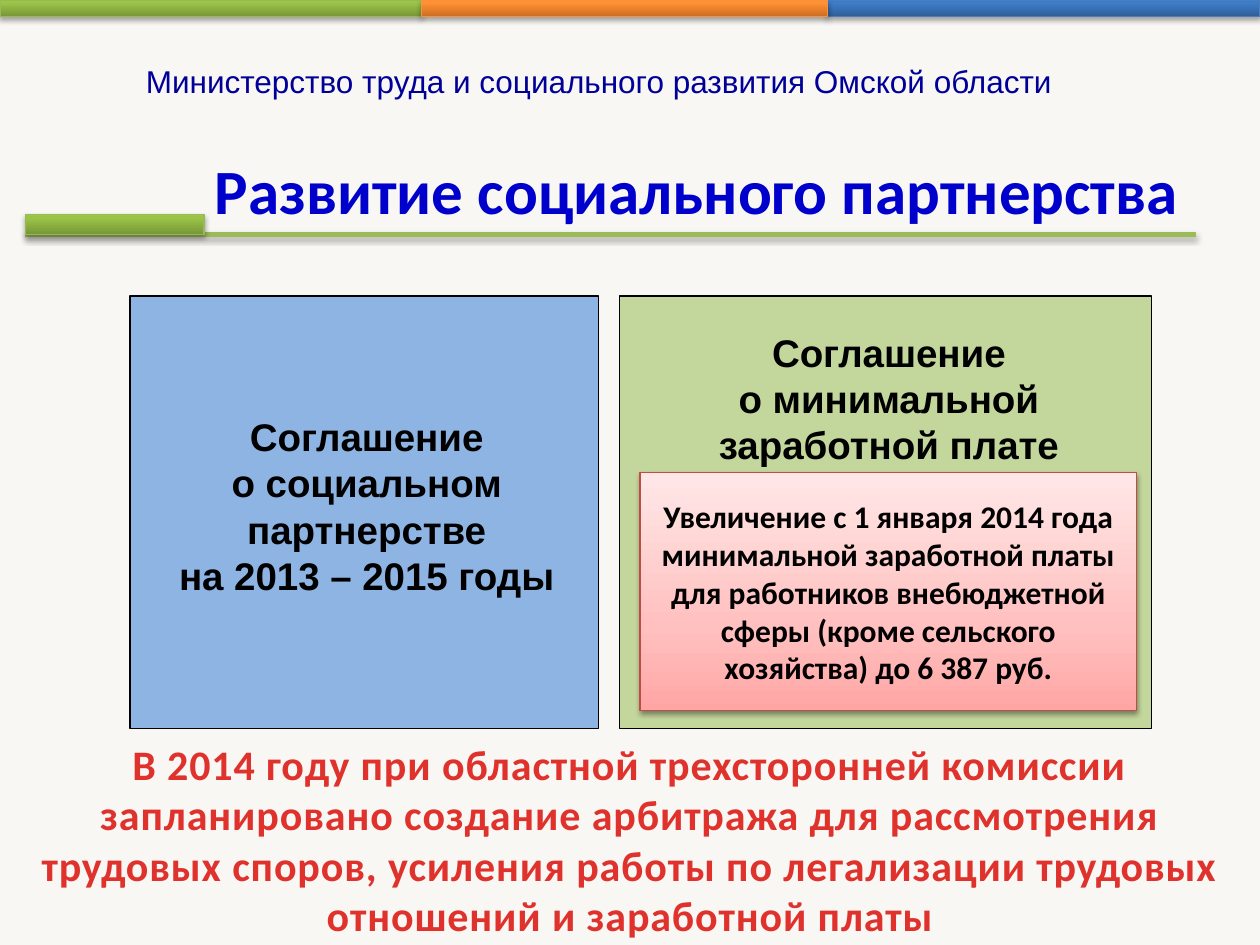
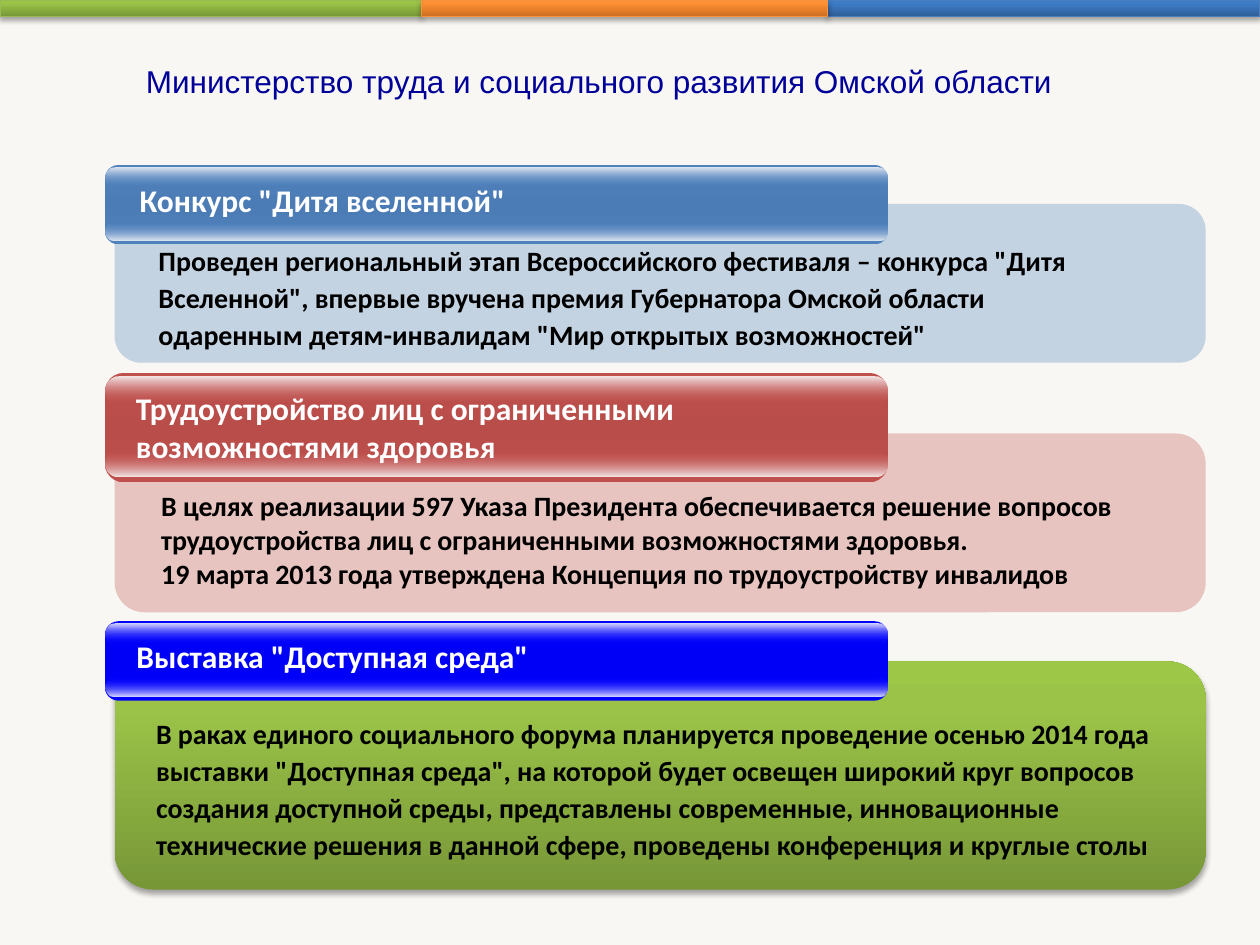
from dataclasses import dataclass

from lxml.etree import SubElement
from pptx import Presentation
from pptx.dml.color import RGBColor
from pptx.enum.shapes import MSO_CONNECTOR, MSO_SHAPE
from pptx.enum.text import MSO_ANCHOR, MSO_AUTO_SIZE, PP_ALIGN
from pptx.oxml.ns import qn
from pptx.util import Pt

LEFT, CENTER = PP_ALIGN.LEFT, PP_ALIGN.CENTER


@dataclass(frozen=True)
class Theme:
    background: str = "F8F7F3"
    ministry: str = "000099"
    title: str = "0000CC"
    title_outline: str = "0F243E"
    rule: str = "9BBB59"
    green_edge: str = "98B955"
    text: str = "000000"
    white: str = "FFFFFF"
    # Gradients: (position, colour, optional opacity)
    green: tuple = ((0, "779737"), (80, "9BC348"), (100, "9DC746"))
    orange: tuple = ((0, "CC6E20"), (80, "FF9034"), (100, "FF9136"))
    blue: tuple = ((0, "2F5F99"), (80, "3D7CC7"), (100, "3A7CCB"))
    pink: tuple = ((0, "FFA6A5"), (35, "FFC0BF"), (100, "FFE7E7"))
    red_text: tuple = ((25, "E0322D"), (100, "A2201C"))
    sans: str = "Arial"
    body: str = "Calibri"
    title_size: int = 36
    note_size: int = 24
    card_size: int = 22
    head_size: int = 18
    body_size: int = 16


T = Theme()

# Content
MINISTRY = "Министерство труда и социального развития Омской области"
TITLE = "Развитие социального партнерства"
COMMISSION = (
    "В 2014 году при областной трехсторонней комиссии запланировано создание "
    "арбитража для рассмотрения трудовых споров, усиления работы по легализации "
    "трудовых отношений и заработной платы")
WAGE_RISE = (
    "Увеличение с 1 января 2014 года минимальной заработной платы для работников "
    "внебюджетной сферы (кроме сельского хозяйства) до 6 387 руб.")

AGREEMENTS = [
    dict(card=(74.2, 169.2, 267.8, 247), color="8EB4E3",
         text_box=(70.6, 232.6, 277.9, 134.6),
         lines=["Соглашение", "о социальном партнерстве", "на 2013 – 2015 годы"]),
    dict(card=(354.2, 169.2, 303.8, 247), color="C3D69B",
         text_box=(364.3, 184.3, 287.3, 104),
         lines=["Соглашение", "о минимальной заработной плате"]),
]

# tab and panel hold (top, height)
SECTIONS = [
    dict(head='Конкурс "Дитя вселенной"', head_box=(59.8, 100.1, 249.1, 28.8),
         align=CENTER, tab=(94.3, 45.4), panel=(116.6, 90.7),
         tab_color="4F81BD", tab_middle="4C7CB6", gloss="E8ECF3",
         panel_fill=("4F81BD", 30), shadow=None, spacing=1.1,
         body_box=(83.5, 133.9, 542.9, 71.3),
         body=['Проведен региональный этап Всероссийского фестиваля – конкурса '
               '"Дитя Вселенной", впервые вручена премия Губернатора Омской области '
               'одаренным детям-инвалидам "Мир открытых возможностей"']),
    dict(head="Трудоустройство лиц с ограниченными возможностями здоровья",
         head_box=(70.6, 218.9, 339.8, 51.1),
         align=LEFT, tab=(213.1, 62.6), panel=(247.7, 102.2),
         tab_color="C0504D", tab_middle="B94D4A", gloss="F5ECEC",
         panel_fill=("C0504D", 30), shadow=None, spacing=1.0,
         body_box=(85, 275.8, 598.3, 65.5),
         body=["В целях реализации 597 Указа Президента обеспечивается решение вопросов "
               "трудоустройства лиц с ограниченными возможностями здоровья.",
               "19 марта 2013 года утверждена Концепция по трудоустройству инвалидов"]),
    dict(head='Выставка "Доступная среда"', head_box=(65.5, 360.7, 249.1, 28.8),
         align=CENTER, tab=(355, 45.4), panel=(378, 130.3),
         tab_color="0000FF", tab_middle="0000F6", gloss="E4E4FF",
         panel_fill=T.green, shadow=(35, 1.8), spacing=1.1,
         body_box=(82.1, 403.9, 583.9, 92.9),
         body=['В раках единого социального форума планируется проведение осенью '
               '2014 года выставки "Доступная среда", на которой будет освещен широкий '
               'круг вопросов создания доступной среды, представлены современные, '
               'инновационные технические решения в данной сфере, проведены конференция '
               'и круглые столы']),
]


# Formatting helpers
def assign(obj, **values):
    for name, value in values.items():
        setattr(obj, name, value)


def place(sp, box):
    assign(sp, **dict(zip(("left", "top", "width", "height"), map(Pt, box))))


def add_color(parent, color, opacity=100):
    clr = SubElement(parent, qn("a:srgbClr"), val=color)
    if opacity < 100:
        SubElement(clr, qn("a:alpha"), val=str(opacity * 1000))


def paint(fill, owner, look, angle=270):
    """look is a colour, a (colour, opacity) pair or a tuple of gradient stops."""
    if isinstance(look, str):
        look = (look, 100)
    if isinstance(look[0], str):
        fill.solid()
        fill.fore_color.rgb = RGBColor.from_string(look[0])
        solid = owner.find(qn("a:solidFill"))
        solid.remove(solid[0])
        add_color(solid, *look)
        return
    fill.gradient()
    grad = owner.find(qn("a:gradFill"))
    for child in list(grad):
        grad.remove(child)
    stops = SubElement(grad, qn("a:gsLst"))
    for position, *color in look:
        add_color(SubElement(stops, qn("a:gs"), pos=str(position * 1000)), *color)
    SubElement(grad, qn("a:lin"), ang=str(angle * 60000), scaled="0")


def set_shadow(sp, shadow):
    effects = SubElement(sp._element.spPr, qn("a:effectLst"))
    if shadow:
        opacity, distance = shadow
        outer = SubElement(effects, qn("a:outerShdw"), blurRad=str(Pt(3.1)),
                           dist=str(Pt(distance)), dir="5400000", rotWithShape="0")
        add_color(outer, "000000", opacity)


def set_line(line, color, width):
    line.color.rgb = RGBColor.from_string(color)
    line.width = Pt(width)


def add_block(s, box, look, edge=None, shadow=None, radius=None, angle=270):
    kind = MSO_SHAPE.RECTANGLE if radius is None else MSO_SHAPE.ROUNDED_RECTANGLE
    sp = s.shapes.add_shape(kind, *map(Pt, box))
    if radius is not None:
        sp.adjustments[0] = radius
    paint(sp.fill, sp._element.spPr, look, angle)
    if edge:
        set_line(sp.line, edge, 0.75)
    else:
        sp.line.fill.background()
    set_shadow(sp, shadow)
    return sp


def write(sp, lines, size, color=T.text, font=T.body, bold=True, align=LEFT,
          spacing=1.0, anchor=MSO_ANCHOR.TOP):
    tf = sp.text_frame
    assign(tf, word_wrap=True, auto_size=MSO_AUTO_SIZE.NONE, vertical_anchor=anchor)
    for i, line in enumerate(lines):
        p = tf.add_paragraph() if i else tf.paragraphs[0]
        assign(p, alignment=align, line_spacing=spacing)
        r = p.add_run()
        r.text = line
        assign(r.font, size=Pt(size), bold=bold, name=font)
        paint(r.font.fill, r._r.get_or_add_rPr(), color, angle=90)
    return r


def add_text(s, box, lines, size, **look):
    return write(s.shapes.add_textbox(*map(Pt, box)), lines, size, **look)


# Shared slide furniture
def add_slide(prs, layout):
    s = prs.slides.add_slide(prs.slide_layouts[layout])
    bands = [(0, 241, T.green, T.green_edge), (473, 720, T.blue, "4B7EBC"),
             (241, 473, T.orange, "F69240")]
    for left, right, look, edge in bands:
        add_block(s, (left, 0, right - left, 9.4), look, edge, (35, 1.8))
    add_text(s, (76.3, 31.7, 623.5, 52.6), [MINISTRY], T.head_size,
             color=T.ministry, font=T.sans, bold=False)
    return s


def build_partnership(prs):
    s = add_slide(prs, 5)

    # Title with its rule and marker
    rule = s.shapes.add_connector(MSO_CONNECTOR.STRAIGHT, *map(Pt, (14.4, 133.9, 683.3, 133.9)))
    set_line(rule.line, T.rule, 3)
    set_shadow(rule, (35, 1.8))
    title = s.shapes.title
    place(title, (76.3, 82.8, 643.7, 51.1))
    r = write(title, [TITLE], T.title_size, color=T.title, align=CENTER)
    rpr = r._r.get_or_add_rPr()
    outline = SubElement(rpr, qn("a:ln"), w=str(Pt(0.75)))
    add_color(SubElement(outline, qn("a:solidFill")), T.title_outline)
    rpr.insert(0, outline)
    add_block(s, (14.4, 122.4, 102.2, 11.5), T.green, T.green_edge, (35, 1.8))

    # Agreements
    for item in AGREEMENTS:
        add_block(s, item["card"], item["color"], T.text)
        add_text(s, item["text_box"], item["lines"], T.card_size, font=T.sans, align=CENTER)
    wage = add_block(s, (365.8, 270, 283.7, 136.1), T.pink, "BF4C48", (38, 1.6))
    write(wage, [WAGE_RISE], T.head_size, align=CENTER, anchor=MSO_ANCHOR.MIDDLE)

    # Plans of the commission
    r = add_text(s, (0, 418.3, 720, 121.7), [COMMISSION], T.note_size,
                 color=T.red_text, align=CENTER)
    r._r.get_or_add_rPr().set("spc", "50")


def build_sections(prs):
    s = add_slide(prs, 6)
    for item in SECTIONS:
        # Panel
        top, height = item["panel"]
        add_block(s, (65.5, top, 623.5, height), item["panel_fill"],
                  shadow=item["shadow"], radius=0.167)
        # Tab with a highlight along each long edge
        top, height = item["tab"]
        color, gloss = item["tab_color"], item["gloss"]
        add_block(s, (59.8, top, 447.8, height),
                  ((0, color), (50, item["tab_middle"]), (100, color)), radius=0.175, angle=90)
        gloss_height = 0.24 * height
        for y, look in (
                (top + 0.71 * height, ((0, color, 0), (100, gloss))),
                (top + 0.035 * height, ((0, gloss), (100, color, 0)))):
            add_block(s, (60.5, y, 446.4, gloss_height), look, radius=0.5, angle=90)
        # Wording
        add_text(s, item["head_box"], [item["head"]], T.head_size,
                 color=T.white, align=item["align"])
        add_text(s, item["body_box"], item["body"], T.body_size, spacing=item["spacing"])


def main():
    prs = Presentation()
    assign(prs, slide_width=Pt(720), slide_height=Pt(540))
    fill = prs.slide_master.background.fill
    fill.solid()
    fill.fore_color.rgb = RGBColor.from_string(T.background)
    build_partnership(prs)
    build_sections(prs)
    prs.save("out.pptx")


if __name__ == "__main__":
    main()
